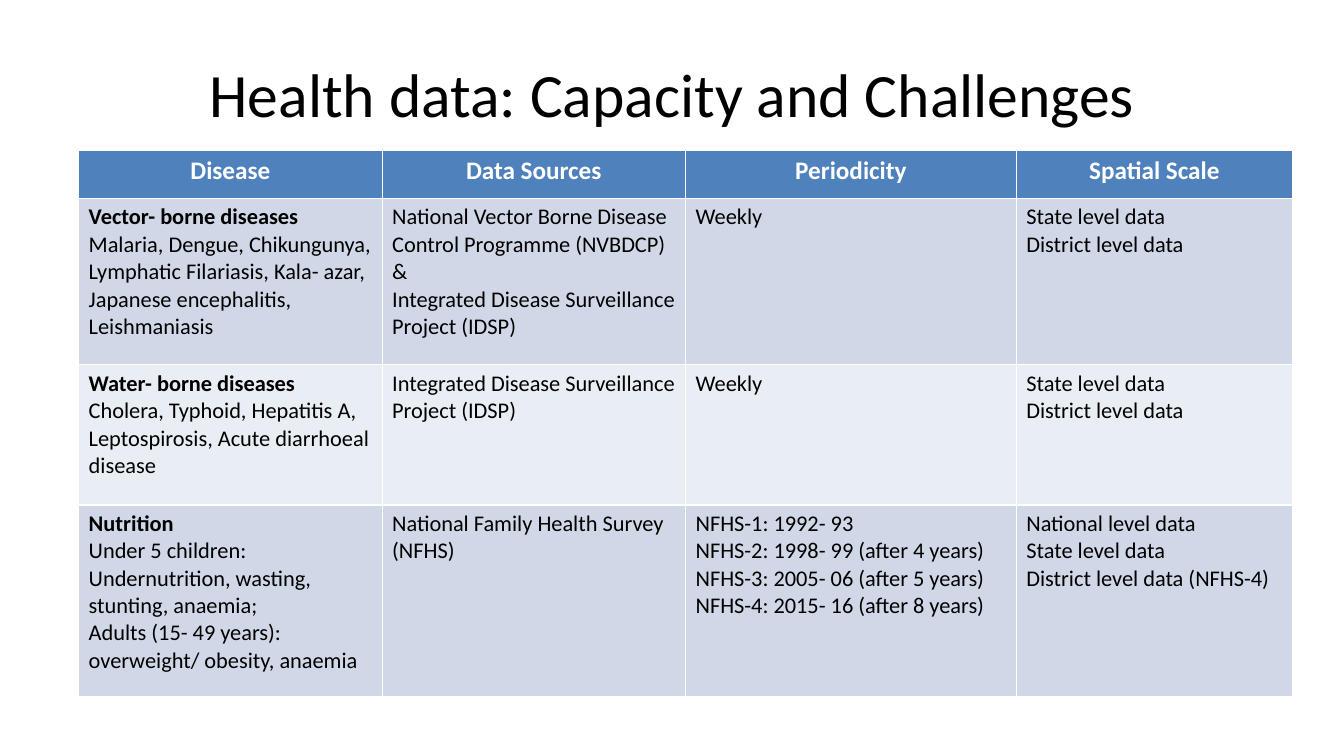
from dataclasses import dataclass

from pptx import Presentation
from pptx.dml.color import RGBColor
from pptx.enum.text import MSO_ANCHOR, PP_ALIGN
from pptx.slide import Slide
from pptx.table import _Cell
from pptx.util import Inches, Pt

CENTER, LEFT = PP_ALIGN.CENTER, PP_ALIGN.LEFT
MIDDLE = MSO_ANCHOR.MIDDLE

BLACK = RGBColor(0x00, 0x00, 0x00)
WHITE = RGBColor(0xFF, 0xFF, 0xFF)
HEADER_BLUE = RGBColor(0x4F, 0x81, 0xBD)
BANDS = (RGBColor(0xD0, 0xD8, 0xE8), RGBColor(0xE9, 0xED, 0xF4))

FONT = "Calibri"
TITLE = "Health data: Capacity and Challenges"
HEADERS = ("Disease", "Data Sources", "Periodicity", "Spatial Scale")
COLUMN_WIDTHS = (3.01, 3.01, 3.28, 2.74)
HEADER_HEIGHT = 0.48
IDSP = "Integrated Disease Surveillance Project (IDSP)"
STATE = "State level data"
DISTRICT = "District level data"


@dataclass
class DiseaseRow:
    height: float
    disease: list[str]  # the first line is the bold group name
    sources: list[str]
    periodicity: list[str]
    scale: list[str]


ROWS = [
    DiseaseRow(
        1.65,
        ["Vector- borne diseases",
         "Malaria, Dengue, Chikungunya, Lymphatic Filariasis, Kala- azar, "
         "Japanese encephalitis, Leishmaniasis"],
        ["National Vector Borne Disease Control Programme (NVBDCP) &", IDSP],
        ["Weekly"],
        [STATE, DISTRICT],
    ),
    DiseaseRow(
        1.39,
        ["Water- borne diseases",
         "Cholera, Typhoid, Hepatitis A, Leptospirosis, Acute diarrhoeal disease"],
        [IDSP],
        ["Weekly"],
        [STATE, DISTRICT],
    ),
    DiseaseRow(
        1.9,
        ["Nutrition",
         "Under 5 children: Undernutrition, wasting, stunting, anaemia;",
         "Adults (15- 49 years): overweight/ obesity, anaemia"],
        ["National Family Health Survey (NFHS)"],
        ["NFHS-1: 1992- 93",
         "NFHS-2: 1998- 99 (after 4 years)",
         "NFHS-3: 2005- 06 (after 5 years)",
         "NFHS-4: 2015- 16 (after 8 years)"],
        ["National level data", STATE, f"{DISTRICT} (NFHS-4)"],
    ),
]


def write_lines(tf, lines: list[str], size: int, color: RGBColor,
                align: PP_ALIGN, bold_first: bool = False) -> None:
    """Write one paragraph per line, with the first one bold on request."""
    tf.word_wrap = True
    tf.text = "\n".join(lines)
    for i, p in enumerate(tf.paragraphs):
        p.alignment = align
        p.font.name = FONT
        p.font.size = Pt(size)
        p.font.color.rgb = color
        p.font.bold = bold_first and i == 0


def fill_cell(cell: _Cell, color: RGBColor) -> None:
    cell.fill.solid()
    cell.fill.fore_color.rgb = color


def add_title(s: Slide) -> None:
    box = s.shapes.add_textbox(Inches(0.67), Inches(0.3), Inches(12), Inches(1.25))
    box.text_frame.vertical_anchor = MIDDLE
    write_lines(box.text_frame, [TITLE], 44, BLACK, CENTER)


def add_disease_table(s: Slide) -> None:
    heights = [HEADER_HEIGHT] + [row.height for row in ROWS]
    table = s.shapes.add_table(
        len(heights), len(HEADERS), Inches(0.78), Inches(1.49),
        Inches(sum(COLUMN_WIDTHS)), Inches(sum(heights))).table
    for column, width in zip(table.columns, COLUMN_WIDTHS):
        column.width = Inches(width)
    for table_row, height in zip(table.rows, heights):
        table_row.height = Inches(height)

    for c, header in enumerate(HEADERS):
        cell = table.cell(0, c)
        fill_cell(cell, HEADER_BLUE)
        write_lines(cell.text_frame, [header], 18, WHITE, CENTER, bold_first=True)

    for r, row in enumerate(ROWS):
        columns = (row.disease, row.sources, row.periodicity, row.scale)
        for c, lines in enumerate(columns):
            cell = table.cell(r + 1, c)
            fill_cell(cell, BANDS[r % 2])
            write_lines(cell.text_frame, lines, 16, BLACK, LEFT, bold_first=c == 0)


def main() -> None:
    prs = Presentation()
    prs.slide_width, prs.slide_height = Inches(13.33), Inches(7.5)
    s = prs.slides.add_slide(prs.slide_layouts[6])
    add_title(s)
    add_disease_table(s)
    prs.save("out.pptx")


if __name__ == "__main__":
    main()
